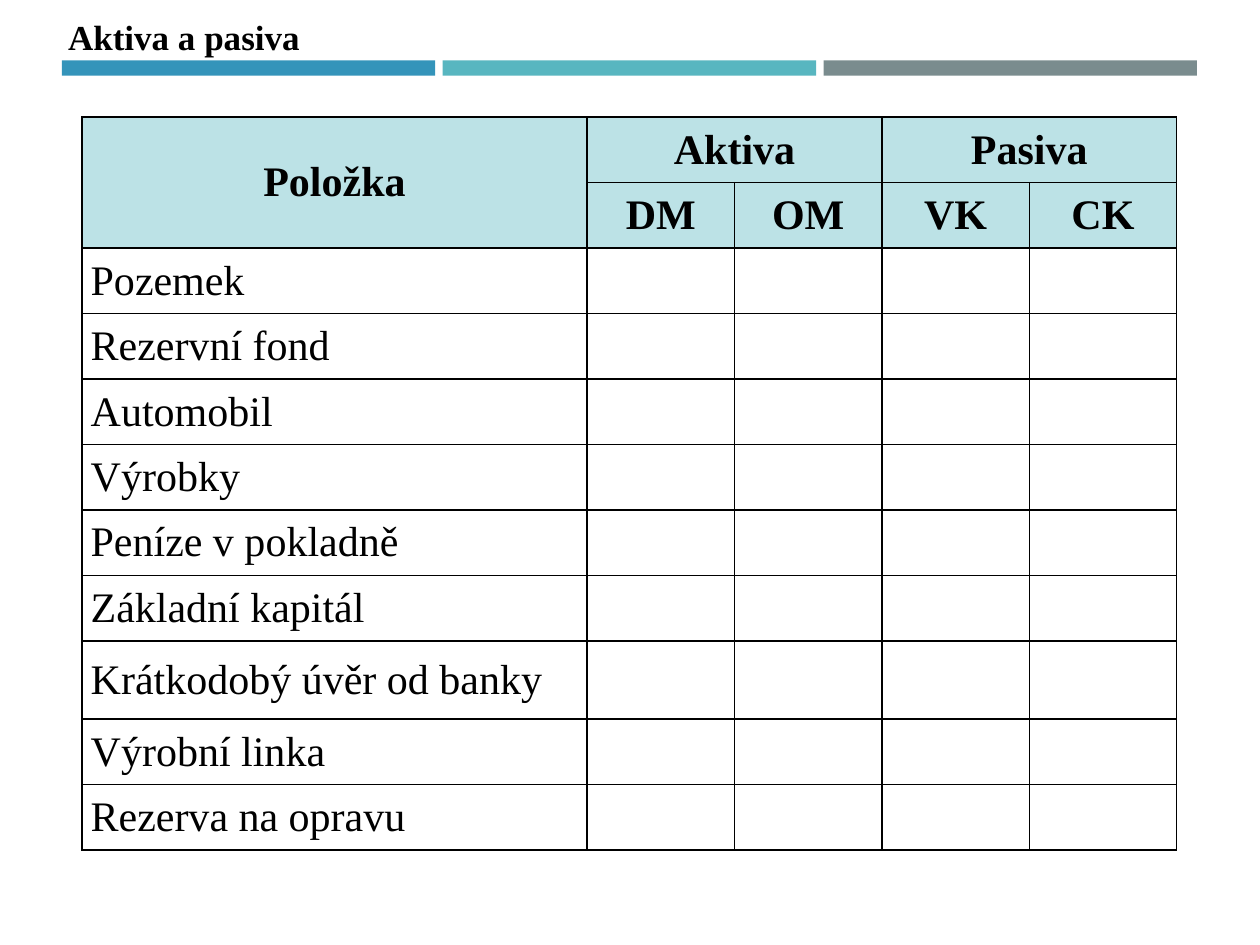
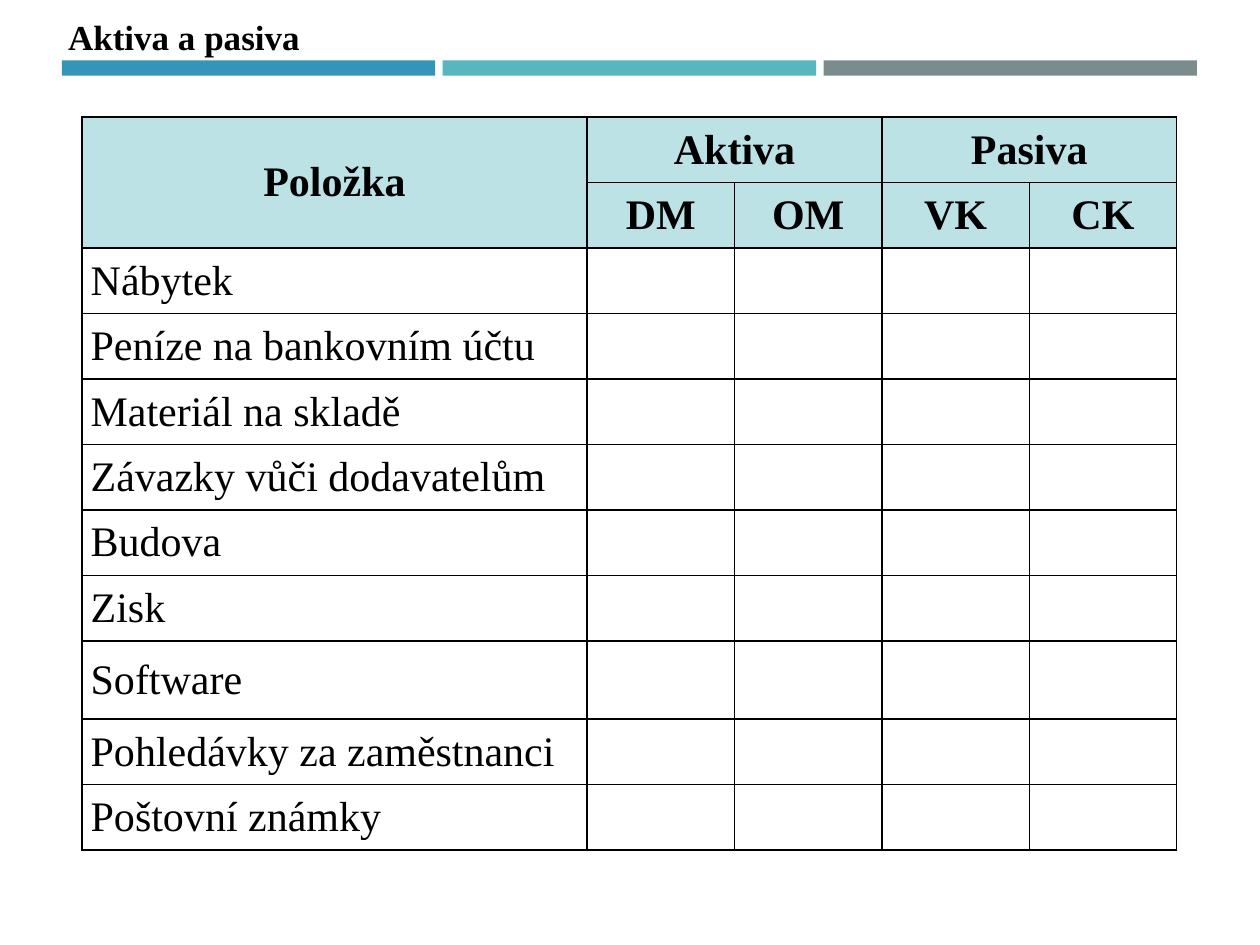
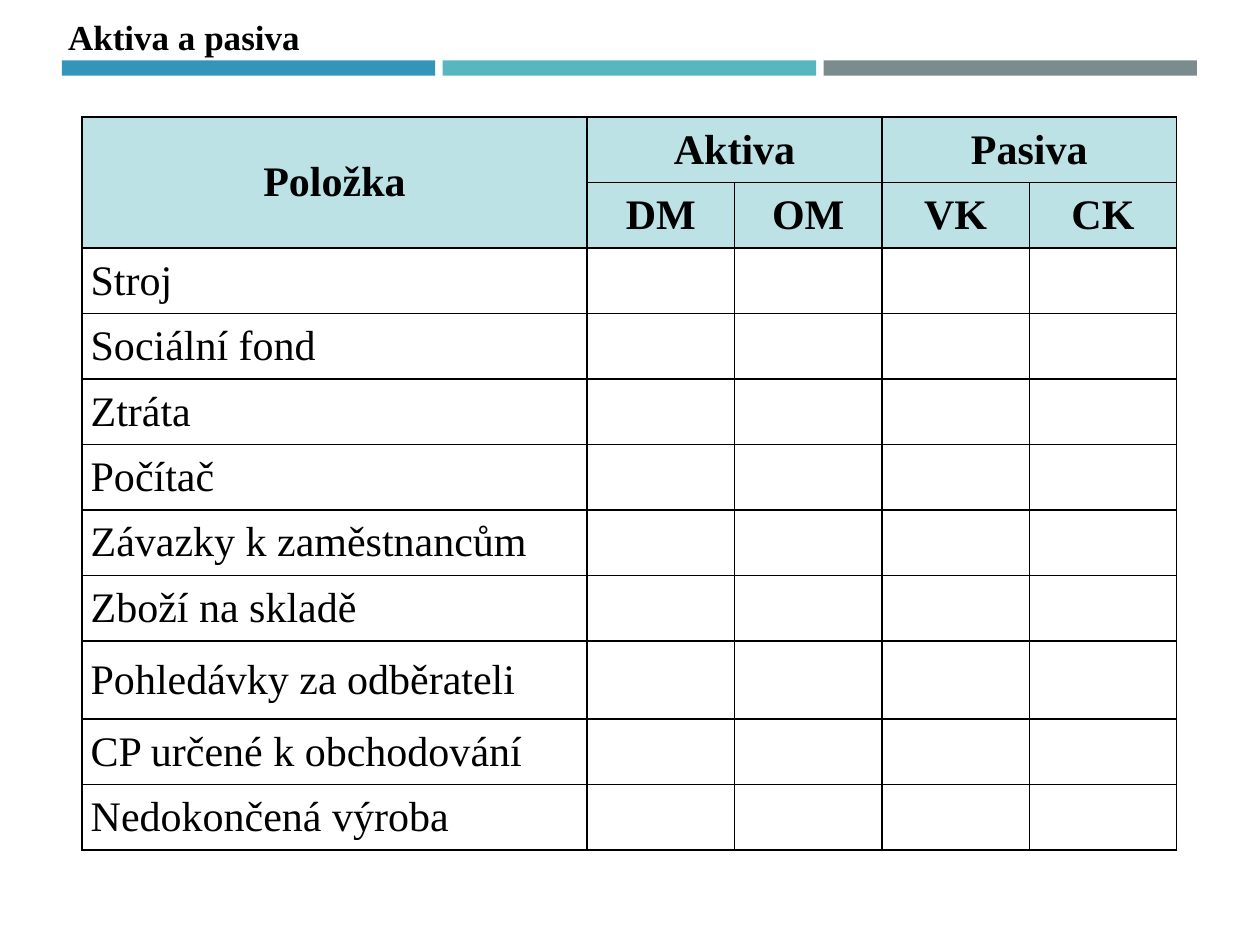
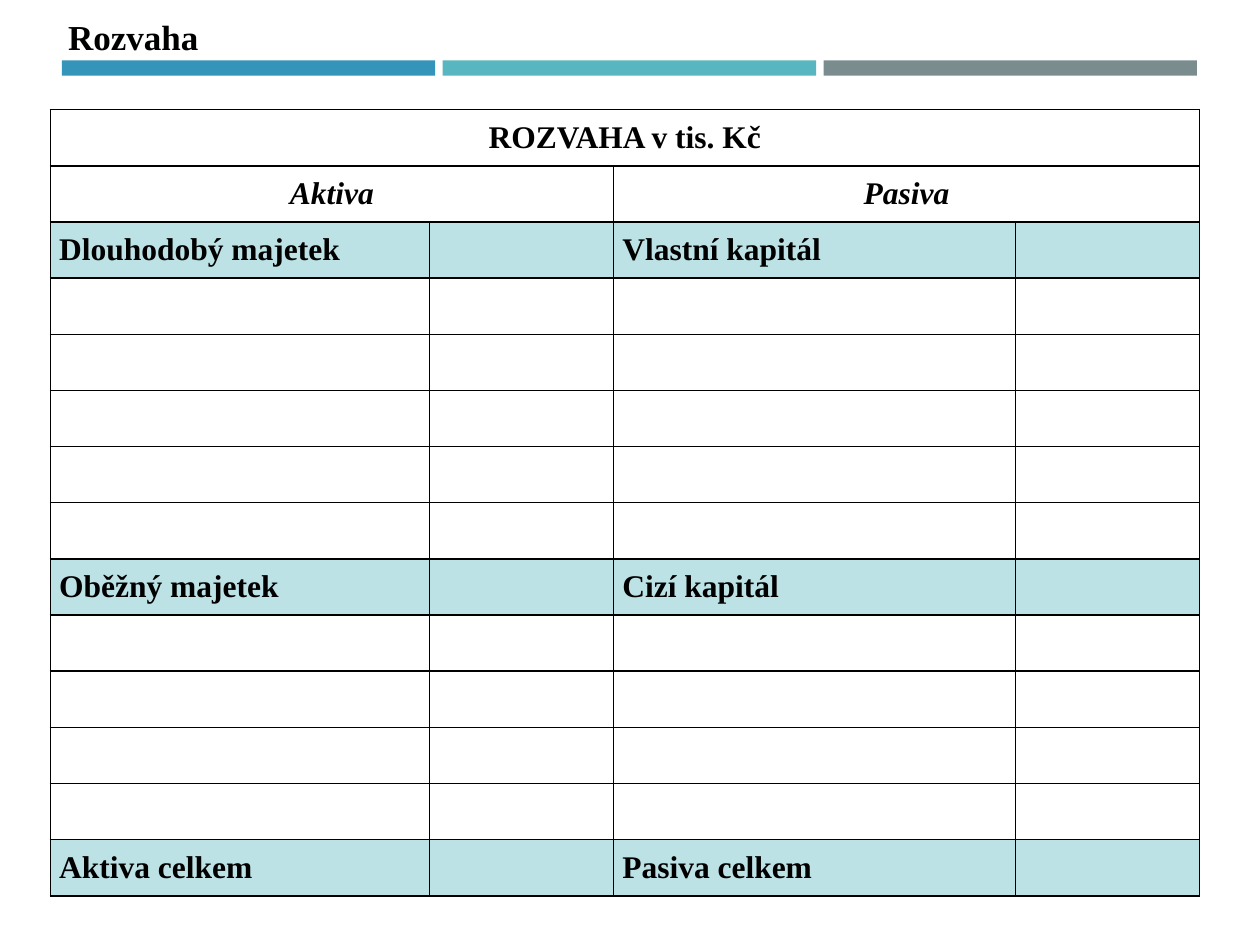
from lxml.etree import SubElement
from pptx import Presentation
from pptx.dml.color import RGBColor
from pptx.enum.shapes import MSO_SHAPE
from pptx.enum.text import MSO_ANCHOR, MSO_AUTO_SIZE, PP_ALIGN
from pptx.oxml.ns import qn
from pptx.util import Inches, Pt

FONT = "Times New Roman"
BLACK = "000000"
PALE_TEAL = "BCE2E6"
BAND_COLORS = ["3494BA", "58B6C0", "7A8C8E"]
BAND_LEFT, BAND_RIGHT, BAND_GAP = 0.49, 9.5, 0.06

ITEM_COLS = [4.01] + [1.17] * 4
ITEM_ROWS = [0.52] * 8 + [0.62] + [0.52] * 2
SHEET_COLS = [3.01, 1.46, 3.19, 1.46]
SHEET_ROWS = [6.24 / 14] * 14

ITEM_LISTS = [
    ["Pozemek", "Rezervní fond", "Automobil", "Výrobky", "Peníze v pokladně",
     "Základní kapitál", "Krátkodobý úvěr od banky", "Výrobní linka",
     "Rezerva na opravu"],
    ["Nábytek", "Peníze na bankovním účtu", "Materiál na skladě",
     "Závazky vůči dodavatelům", "Budova", "Zisk", "Software",
     "Pohledávky za zaměstnanci", "Poštovní známky"],
    ["Stroj", "Sociální fond", "Ztráta", "Počítač", "Závazky k zaměstnancům",
     "Zboží na skladě", "Pohledávky za odběrateli",
     "CP určené k obchodování", "Nedokončená výroba"],
]
SHEET_SECTIONS = {
    2: ("Dlouhodobý majetek", "Vlastní kapitál"),
    8: ("Oběžný majetek", "Cizí kapitál"),
    13: ("Aktiva celkem", "Pasiva celkem"),
}


def rgb(color):
    return RGBColor.from_string(color)


def style_paragraph(p, size, align, bold=True, italic=False):
    p.alignment = align
    p.font.name = FONT
    p.font.size = Pt(size)
    p.font.bold = bold
    p.font.italic = italic
    p.font.color.rgb = rgb(BLACK)


def add_bands(slide):
    layout_tree = slide.slide_layout.shapes.element
    width = (BAND_RIGHT - BAND_LEFT + BAND_GAP) / len(BAND_COLORS) - BAND_GAP
    for i, color in enumerate(BAND_COLORS):
        left = BAND_LEFT + i * (width + BAND_GAP)
        sp = slide.shapes.add_shape(MSO_SHAPE.RECTANGLE, Inches(left),
                                    Inches(0.48), Inches(width), Inches(0.12))
        sp.shadow.inherit = False
        sp.fill.solid()
        sp.fill.fore_color.rgb = rgb(color)
        sp.line.fill.background()
        layout_tree.append(sp.element)


def add_titled_slide(prs, title, width):
    slide = prs.slides.add_slide(prs.slide_layouts.get_by_name("Title Only"))
    sp = slide.shapes.title
    sp.left, sp.top = Inches(0.44), Inches(0.07)
    sp.width, sp.height = Inches(width), Inches(0.44)
    tf = sp.text_frame
    tf.text = title
    tf.word_wrap = False
    tf.auto_size = MSO_AUTO_SIZE.SHAPE_TO_FIT_TEXT
    tf.vertical_anchor = MSO_ANCHOR.TOP
    style_paragraph(tf.paragraphs[0], 20, PP_ALIGN.LEFT)
    return slide


def add_borders(cell):
    tc_pr = cell._tc.get_or_add_tcPr()
    for side in ("a:lnL", "a:lnR", "a:lnT", "a:lnB"):
        ln = SubElement(tc_pr, qn(side), w=str(Pt(1)))
        fill = SubElement(ln, qn("a:solidFill"))
        SubElement(fill, qn("a:srgbClr"), val=BLACK)


def add_grid(slide, left, top, cols, rows):
    frame = slide.shapes.add_table(len(rows), len(cols), Inches(left), Inches(top),
                                   Inches(sum(cols)), Inches(sum(rows)))
    table = frame.table
    table.first_row = table.horz_banding = False
    for column, width in zip(table.columns, cols):
        column.width = Inches(width)
    for row, height in zip(table.rows, rows):
        row.height = Inches(height)
    for cell in table.iter_cells():
        add_borders(cell)
        cell.fill.background()
        cell.margin_left = cell.margin_right = Inches(0.07)
        cell.margin_top = cell.margin_bottom = 0
        cell.vertical_anchor = MSO_ANCHOR.MIDDLE
    return table


def shade_row(table, row):
    for cell in table.rows[row].cells:
        cell.fill.solid()
        cell.fill.fore_color.rgb = rgb(PALE_TEAL)


def write_cell(table, row, col, text, size, align=PP_ALIGN.CENTER, span=(1, 1), **style):
    cell = table.cell(row, col)
    if span != (1, 1):
        cell.merge(table.cell(row + span[0] - 1, col + span[1] - 1))
    cell.text = text
    style_paragraph(cell.text_frame.paragraphs[0], size, align, **style)


def add_item_table(slide, items):
    table = add_grid(slide, 0.65, 0.93, ITEM_COLS, ITEM_ROWS)
    shade_row(table, 0)
    shade_row(table, 1)
    write_cell(table, 0, 0, "Položka", 24, span=(2, 1))
    write_cell(table, 0, 1, "Aktiva", 24, span=(1, 2))
    write_cell(table, 0, 3, "Pasiva", 24, span=(1, 2))
    for col, heading in enumerate(["DM", "OM", "VK", "CK"], start=1):
        write_cell(table, 1, col, heading, 24)
    for row, item in enumerate(items, start=2):
        write_cell(table, row, 0, item, 24, PP_ALIGN.JUSTIFY, bold=False)


def add_balance_sheet(slide):
    table = add_grid(slide, 0.4, 0.87, SHEET_COLS, SHEET_ROWS)
    write_cell(table, 0, 0, "ROZVAHA v tis. Kč", 18, span=(1, 4))
    write_cell(table, 1, 0, "Aktiva", 18, span=(1, 2), italic=True)
    write_cell(table, 1, 2, "Pasiva", 18, span=(1, 2), italic=True)
    for row, (asset, liability) in SHEET_SECTIONS.items():
        shade_row(table, row)
        write_cell(table, row, 0, asset, 18, PP_ALIGN.LEFT)
        write_cell(table, row, 2, liability, 18, PP_ALIGN.LEFT)


def main():
    prs = Presentation()
    prs.slide_width, prs.slide_height = Inches(10), Inches(7.5)
    for items in ITEM_LISTS:
        add_item_table(add_titled_slide(prs, "Aktiva a pasiva", 2.05), items)
    slide = add_titled_slide(prs, "Rozvaha", 1.25)
    add_balance_sheet(slide)
    add_bands(slide)
    prs.save("out.pptx")


if __name__ == "__main__":
    main()
